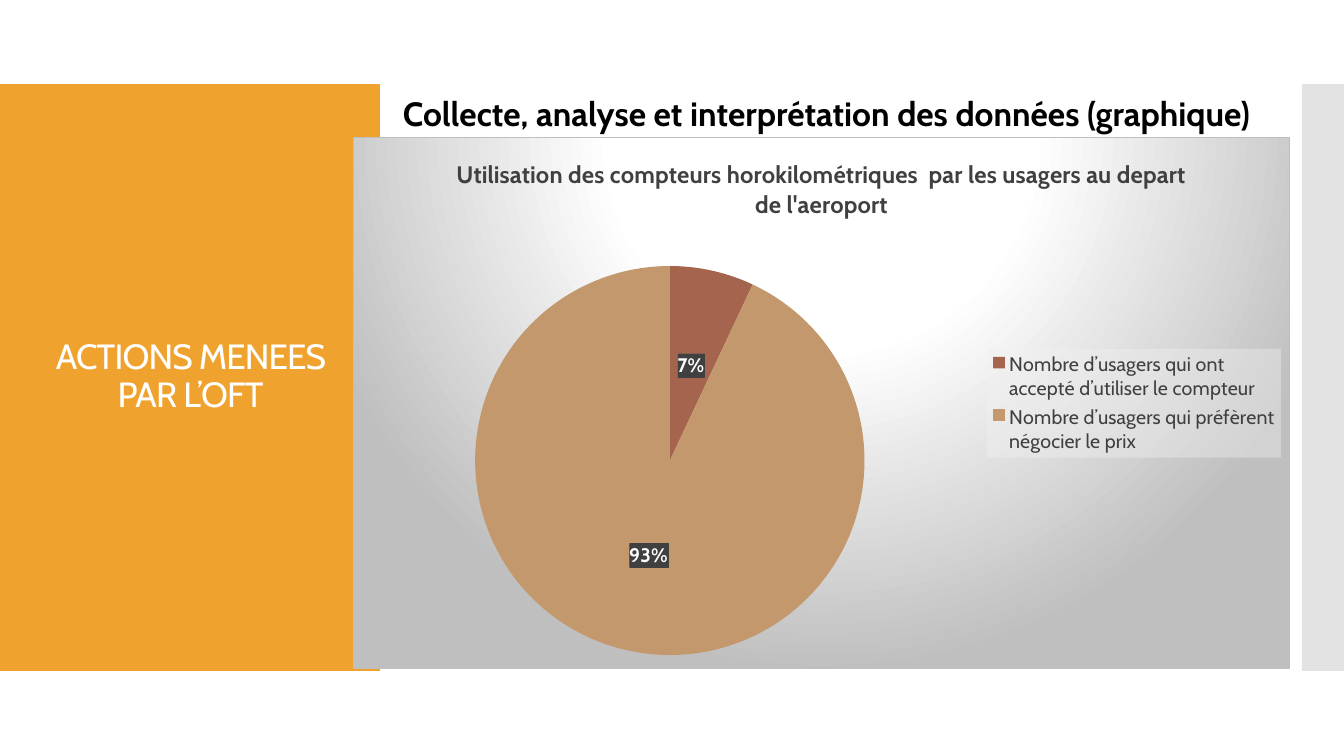
from lxml import etree
from pptx import Presentation
from pptx import util as u
from pptx.chart.data import CategoryChartData
from pptx.dml.color import RGBColor
from pptx.enum import chart as ch, shapes, text
from pptx.oxml import parse_xml
from pptx.oxml.ns import qn

# Content
TITLE = "ACTIONS MENEES PAR L’OFT"
HEADING = "Collecte, analyse et interprétation des données\u00a0(graphique)"
CHART_TITLE = ("Utilisation des compteurs horokilométriques  par les usagers "
               "au depart de l'aeroport")
FONT = "Cabin"
WHITE = RGBColor(0xFF, 0xFF, 0xFF)
BLACK = RGBColor(0, 0, 0)
DARK = RGBColor(0x40, 0x40, 0x40)
ORANGE = RGBColor(0xF0, 0xA2, 0x2E)
GREY = RGBColor(0xC8, 0xC8, 0xC8)
SHARES = [
    ("Nombre d’usagers qui ont accepté d’utiliser le compteur", 7,
     RGBColor(0xA5, 0x64, 0x4E)),
    ("Nombre d’usagers qui préfèrent négocier le prix", 93,
     RGBColor(0xC3, 0x98, 0x6D)),
]

# Boxes in px: left, top, width, height
PX = 914400 / 100.8
BAND_TOP, BAND_H = 84, 587
CHART_BOX = (353, 137, 937, 532)
PIE_BOX = (475, 266, 390, 390)
LEGEND_BOX = (987, 349, 294, 109)

NS = ('xmlns:c="http://schemas.openxmlformats.org/drawingml/2006/chart" '
      'xmlns:a="http://schemas.openxmlformats.org/drawingml/2006/main"')
PANEL_FILL = (
    '<a:gradFill><a:gsLst>'
    '<a:gs pos="0"><a:srgbClr val="FFFFFF"/></a:gs>'
    '<a:gs pos="39000"><a:srgbClr val="FFFFFF"/></a:gs>'
    '<a:gs pos="100000"><a:srgbClr val="BFBFBF"/></a:gs></a:gsLst>'
    '<a:path path="circle"><a:fillToRect l="50000" t="-80000" r="50000" b="180000"/>'
    '</a:path></a:gradFill>'
    '<a:ln w="9525"><a:solidFill><a:srgbClr val="BFBFBF"/></a:solidFill></a:ln>')
LEGEND_FILL = ('<a:solidFill><a:srgbClr val="F2F2F2"><a:alpha val="39000"/>'
               '</a:srgbClr></a:solidFill>')
LABEL_FILL = ('<a:pattFill prst="dkVert"><a:fgClr><a:srgbClr val="404040"/></a:fgClr>'
              '<a:bgClr><a:srgbClr val="595959"/></a:bgClr></a:pattFill>')


def emu(box):
    return [u.Emu(round(v * PX)) for v in box]


def style(font, size, color, bold=False):
    font.name, font.size, font.bold = FONT, u.Pt(size), bold
    font.color.rgb = color


def add_band(left, width, color):
    s = slide.shapes.add_shape(shapes.MSO_SHAPE.RECTANGLE,
                               *emu((left, BAND_TOP, width, BAND_H)))
    s.shadow.inherit = False
    s.fill.solid()
    s.fill.fore_color.rgb = color
    s.line.fill.background()
    return s


def add_text(box, words, size, color, align, bold=False):
    tf = slide.shapes.add_textbox(*emu(box)).text_frame
    tf.word_wrap = True
    tf.vertical_anchor = text.MSO_ANCHOR.MIDDLE
    p = tf.paragraphs[0]
    p.text, p.alignment, p.line_spacing = words, align, 0.9
    style(p.runs[0].font, size, color, bold)
    return p


def sp_pr(fill):
    return parse_xml(f'<c:spPr {NS}>{fill}</c:spPr>')


def layout(box, target=""):
    x, y = [(box[i] - CHART_BOX[i]) / CHART_BOX[i + 2] for i in (0, 1)]
    w, h = [box[i] / CHART_BOX[i] for i in (2, 3)]
    sizes = "".join(f'<c:{k} val="{v:.3f}"/>' for k, v in zip("xywh", (x, y, w, h)))
    return parse_xml(f'<c:layout {NS}><c:manualLayout>{target}<c:xMode val="edge"/>'
                     f'<c:yMode val="edge"/>{sizes}</c:manualLayout></c:layout>')


def drop_layout(element):
    for old in element.findall(qn("c:layout")):
        element.remove(old)


prs = Presentation()
prs.slide_width, prs.slide_height = emu((1344, 756))
slide = prs.slides.add_slide(prs.slide_layouts[6])

# Side bands
add_band(0, 380, ORANGE)
right_band = add_band(1302, 42, GREY)
band_color = right_band.fill._xPr.find(".//" + qn("a:srgbClr"))
etree.SubElement(band_color, qn("a:alpha")).set("val", "50000")

# Title and heading
p = add_text((28, 124, 325, 507), TITLE, 25, WHITE, text.PP_ALIGN.CENTER)
p.runs[0].font._element.set("spc", "-60")
add_text((393, 31, 885, 170), HEADING, 24, BLACK, text.PP_ALIGN.JUSTIFY, True)

# Pie chart
data = CategoryChartData()
data.categories = [name for name, _, _ in SHARES]
data.add_series("Series 1", [value for _, value, _ in SHARES])
chart = slide.shapes.add_chart(ch.XL_CHART_TYPE.PIE, *emu(CHART_BOX), data).chart
style(chart.font, 14, BLACK)
chart._chartSpace.find(qn("c:chart")).addnext(sp_pr(PANEL_FILL))

chart.has_title = True
tf = chart.chart_title.text_frame
tf.text = CHART_TITLE
style(tf.paragraphs[0].runs[0].font, 17, DARK, True)

plot = chart.plots[0]
plot.vary_by_categories = True
for i, (_, _, color) in enumerate(SHARES):
    fill = plot.series[0].points[i].format.fill
    fill.solid()
    fill.fore_color.rgb = color
plot_area = chart._chartSpace.find(".//" + qn("c:plotArea"))
drop_layout(plot_area)
plot_area.insert(0, layout(PIE_BOX, '<c:layoutTarget val="inner"/>'))

# Percent labels
plot.has_data_labels = True
labels = plot.data_labels
labels.show_percentage, labels.show_value = True, False
labels.number_format, labels.number_format_is_linked = "0%", False
labels.position = ch.XL_LABEL_POSITION.CENTER
style(labels.font, 14, WHITE, True)
labels._element.find(qn("c:txPr")).addprevious(sp_pr(LABEL_FILL))

# Legend
chart.has_legend = True
legend = chart.legend
legend.position = ch.XL_LEGEND_POSITION.RIGHT
legend.include_in_layout = False
style(legend.font, 14, DARK)
drop_layout(legend._element)
legend._element.find(qn("c:legendPos")).addnext(layout(LEGEND_BOX))
legend._element.find(qn("c:txPr")).addprevious(sp_pr(LEGEND_FILL))

prs.save("out.pptx")
